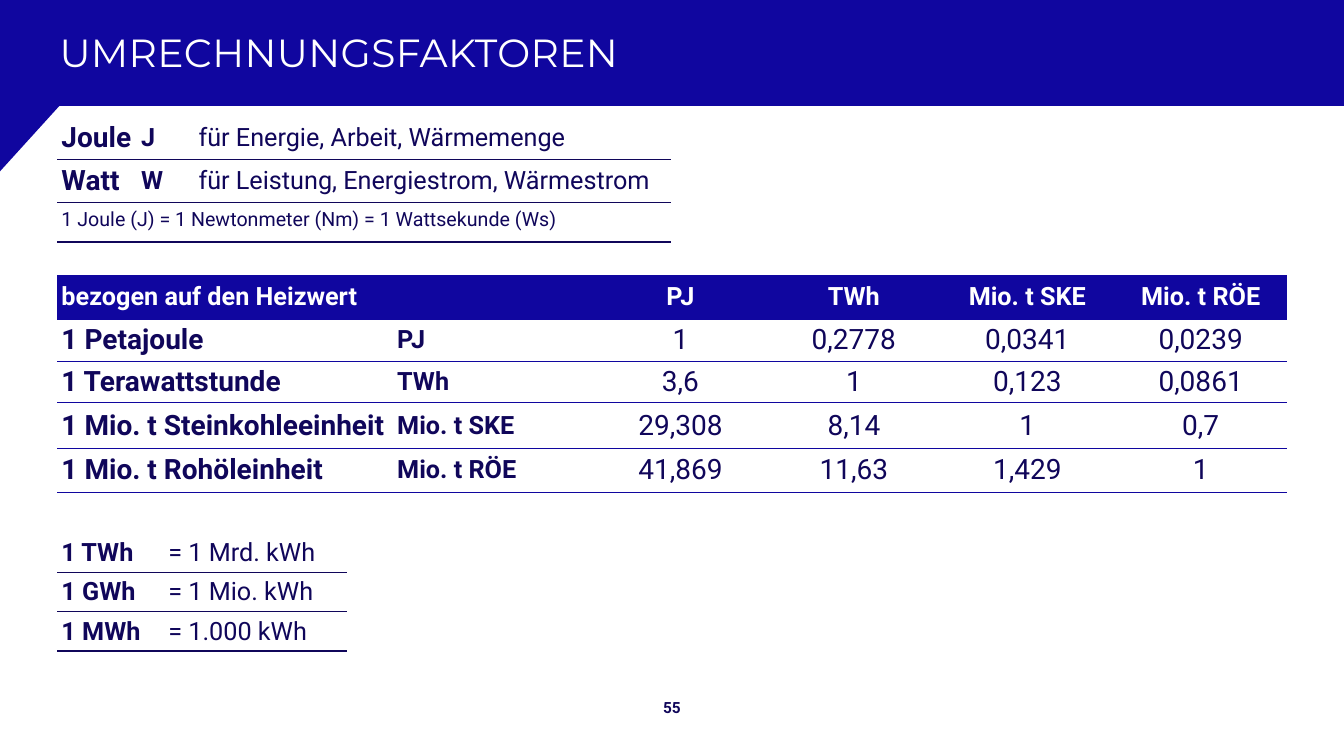
from lxml.etree import SubElement
from pptx import Presentation
from pptx.dml.color import RGBColor
from pptx.enum.text import MSO_ANCHOR, PP_ALIGN
from pptx.oxml.ns import qn
from pptx.util import Inches, Pt

NAVY = RGBColor(0x10, 0x06, 0x5A)
BLUE = RGBColor(0x10, 0x06, 0x9F)
WHITE = RGBColor(0xFF, 0xFF, 0xFF)
LEFT, CENTER = PP_ALIGN.LEFT, PP_ALIGN.CENTER
PLAIN_STYLE = "{2D5ABB26-0587-4C30-8999-92F81FD0307C}"

WIDTH, HEIGHT = 13.33, 7.5
TABLE_LEFT, TITLE_LEFT, TABLE_WIDTH = 0.57, 0.59, 12.2
INSET = 0.04
BAND_POINTS = [(0, -1), (1333, -1), (1333, 105), (59, 105), (0, 170)]

TITLE = "UMRECHNUNGSFAKTOREN"
PAGE = "55"
NAME, SYMBOL, TEXT, VALUE = (20, True, LEFT), (18, True, LEFT), (18, False, LEFT), (20, False, CENTER)
NOTE = (14, False, LEFT)

TABLES = [
    dict(
        top=1.15, line=NAVY, header=False,
        columns=[0.79, 0.57, 4.73], heights=[0.43, 0.43, 0.39],
        styles=[NAME, SYMBOL, TEXT],
        rows=[
            ["Joule", "J", "für Energie, Arbeit, Wärmemenge"],
            ["Watt", "W", "für Leistung, Energiestrom, Wärmestrom"],
            ["1 Joule (J) = 1 Newtonmeter (Nm) = 1 Wattsekunde (Ws)", None, None],
        ],
    ),
    dict(
        top=2.73, line=BLUE, header=True,
        columns=[3.33, 1.99] + [1.72] * 4, heights=[0.44, 0.39, 0.39, 0.45, 0.44],
        styles=[NAME, SYMBOL] + [VALUE] * 4,
        rows=[
            ["bezogen auf den Heizwert", None, "PJ", "TWh", "Mio. t SKE", "Mio. t RÖE"],
            ["1 Petajoule", "PJ", "1", "0,2778", "0,0341", "0,0239"],
            ["1 Terawattstunde", "TWh", "3,6", "1", "0,123", "0,0861"],
            ["1 Mio. t Steinkohleeinheit", "Mio. t SKE", "29,308", "8,14", "1", "0,7"],
            ["1 Mio. t Rohöleinheit", "Mio. t RÖE", "41,869", "11,63", "1,429", "1"],
        ],
    ),
    dict(
        top=5.29, line=NAVY, header=False,
        columns=[1.06, 1.81], heights=[0.39] * 3,
        styles=[SYMBOL, TEXT],
        rows=[
            ["1 TWh", "= 1 Mrd. kWh"],
            ["1 GWh", "= 1 Mio. kWh"],
            ["1 MWh", "= 1.000 kWh"],
        ],
    ),
]


def write(frame, text, font, size, color, bold=False, align=LEFT):
    paragraph = frame.paragraphs[0]
    paragraph.add_run().text = text
    paragraph.alignment = align
    paragraph.font.name = font
    paragraph.font.size = Pt(size)
    paragraph.font.bold = bold
    paragraph.font.color.rgb = color
    return paragraph


def set_insets(box, side, vertical):
    box.margin_left = box.margin_right = Inches(side)
    box.margin_top = box.margin_bottom = Inches(vertical)
    box.vertical_anchor = MSO_ANCHOR.MIDDLE


def add_border(cell, edge, color, width):
    line = SubElement(cell._tc.get_or_add_tcPr(), qn(f"a:{edge}"), w=str(Pt(width)))
    fill = SubElement(line, qn("a:solidFill"))
    SubElement(fill, qn("a:srgbClr"), val=str(color))


def add_band(slide):
    builder = slide.shapes.build_freeform(*BAND_POINTS[0], scale=Inches(0.01))
    builder.add_line_segments(BAND_POINTS[1:], close=True)
    band = builder.convert_to_shape()
    band.fill.solid()
    band.fill.fore_color.rgb = BLUE
    band.line.fill.background()
    band.shadow.inherit = False
    slide.shapes.title.element.addprevious(band.element)


def add_title(slide):
    title = slide.shapes.title
    title.left, title.top = Inches(TITLE_LEFT), Inches(0.02)
    title.width, title.height = Inches(TABLE_WIDTH), Inches(0.98)
    set_insets(title.text_frame, 0, INSET)
    paragraph = write(title.text_frame, TITLE, "Montserrat", 28, WHITE)
    paragraph.runs[0].font._element.set("spc", "30")


def add_page_number(slide):
    width = 0.59
    box = slide.shapes.add_textbox(
        Inches((WIDTH - width) / 2), Inches(6.88), Inches(width), Inches(0.28))
    box.text_frame.word_wrap = True
    set_insets(box.text_frame, 0, 0)
    write(box.text_frame, PAGE, "Roboto", 11, NAVY, True, CENTER)


def add_table(slide, top, line, header, columns, heights, styles, rows):
    frame = slide.shapes.add_table(
        len(rows), len(columns), Inches(TABLE_LEFT), Inches(top),
        Inches(sum(columns)), Inches(sum(heights)))
    table = frame.table
    table._tbl.tblPr.find(qn("a:tableStyleId")).text = PLAIN_STYLE
    table.first_row, table.horz_banding = header, False
    for column, width in zip(table.columns, columns):
        column.width = Inches(width)
    for row, height in zip(table.rows, heights):
        row.height = Inches(height)

    for r, texts in enumerate(rows):
        is_header = header and r == 0
        is_last = r == len(rows) - 1
        span = 1 + texts.count(None)
        if span > 1:
            table.cell(r, 0).merge(table.cell(r, span - 1))
        for c, text in enumerate(texts):
            cell = table.cell(r, c)
            set_insets(cell, INSET, INSET)
            if r or header:
                add_border(cell, "lnT", line, 0.59)
            add_border(cell, "lnB", line, 1.18 if is_last else 0.59)
            if is_header:
                cell.fill.solid()
                cell.fill.fore_color.rgb = BLUE
            else:
                cell.fill.background()
            if text is None:
                continue
            size, bold, align = styles[c]
            if is_header:
                size, bold = 18, True
            elif span > 1:
                size, bold, align = NOTE
                cell.margin_top = 0
            write(cell.text_frame, text, "Roboto", size, WHITE if is_header else NAVY, bold, align)


def main():
    presentation = Presentation()
    presentation.slide_width, presentation.slide_height = Inches(WIDTH), Inches(HEIGHT)
    slide = presentation.slides.add_slide(presentation.slide_layouts[5])
    add_band(slide)
    add_title(slide)
    add_page_number(slide)
    for content in TABLES:
        add_table(slide, **content)
    presentation.save("out.pptx")


if __name__ == "__main__":
    main()
